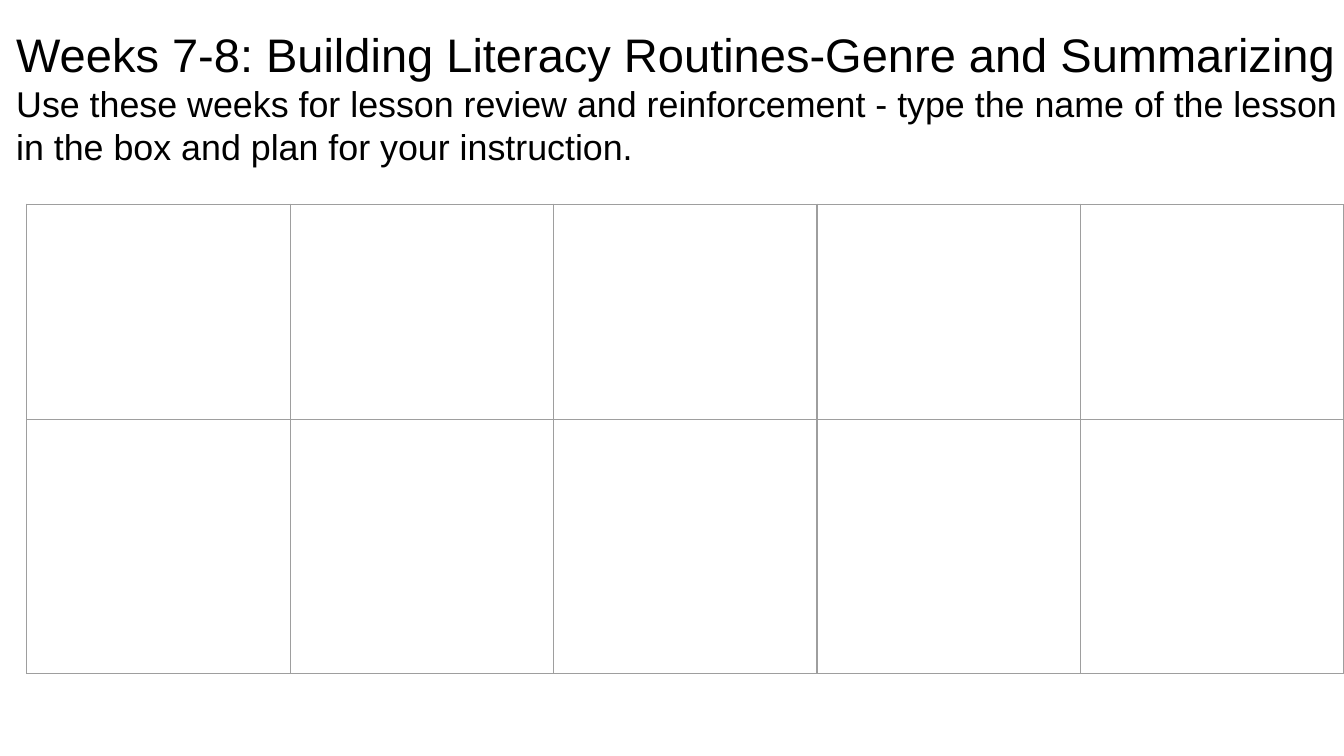
from lxml import etree
from pptx import Presentation
from pptx.dml.color import RGBColor
from pptx.enum import text
from pptx.oxml import ns
from pptx.util import Inches, Pt

BLACK = RGBColor(0x00, 0x00, 0x00)
GRAY = RGBColor(0x9E, 0x9E, 0x9E)

deck = Presentation()
deck.slide_width = Inches(10)
deck.slide_height = Inches(10 * 9 / 16)
slide = deck.slides.add_slide(deck.slide_layouts[5])


def border(cell):
    """Draw a thin gray line on all four sides of the cell."""
    props = cell._tc.get_or_add_tcPr()
    for i, side in enumerate(("lnL", "lnR", "lnT", "lnB")):
        line = etree.Element(ns.qn("a:" + side), w=str(Pt(0.75)))
        fill = etree.SubElement(line, ns.qn("a:solidFill"))
        etree.SubElement(fill, ns.qn("a:srgbClr"), val=str(GRAY))
        props.insert(i, line)


# Heading: title line and guidance
title = slide.shapes.title
title.left, title.top = Inches(0.02), Inches(0.09)
title.width, title.height = Inches(10.26), Inches(0.63)
frame = title.text_frame
frame.word_wrap = True
frame.auto_size = text.MSO_AUTO_SIZE.NONE
frame.vertical_anchor = text.MSO_ANCHOR.TOP
frame.margin_left = frame.margin_right = Inches(0.1)
frame.margin_top = frame.margin_bottom = Inches(0.1)

lines = [
    ("Weeks 7-8: Building Literacy Routines-Genre and Summarizing", 25.2),
    ("Use these weeks for lesson review and reinforcement - type the name "
     "of the lesson in the box and plan for your instruction.", 19.2),
]
for i, (words, size) in enumerate(lines):
    para = frame.add_paragraph() if i else frame.paragraphs[0]
    para.alignment = text.PP_ALIGN.LEFT
    para.line_spacing = 1.0
    para.space_before = Pt(0)
    run = para.add_run()
    run.text = words
    run.font.name = "Arial"
    run.font.size = Pt(size)
    run.font.color.rgb = BLACK

# Planning grid: five days by two weeks
heights = [1.6, 1.89]
grid = slide.shapes.add_table(len(heights), 5, Inches(0.2), Inches(1.52),
                              Inches(9.8), Inches(sum(heights))).table
grid.first_row = grid.horz_banding = False
for col in grid.columns:
    col.width = Inches(1.96)
for row, height in zip(grid.rows, heights):
    row.height = Inches(height)
    for cell in row.cells:
        cell.fill.background()
        border(cell)

deck.save("out.pptx")
